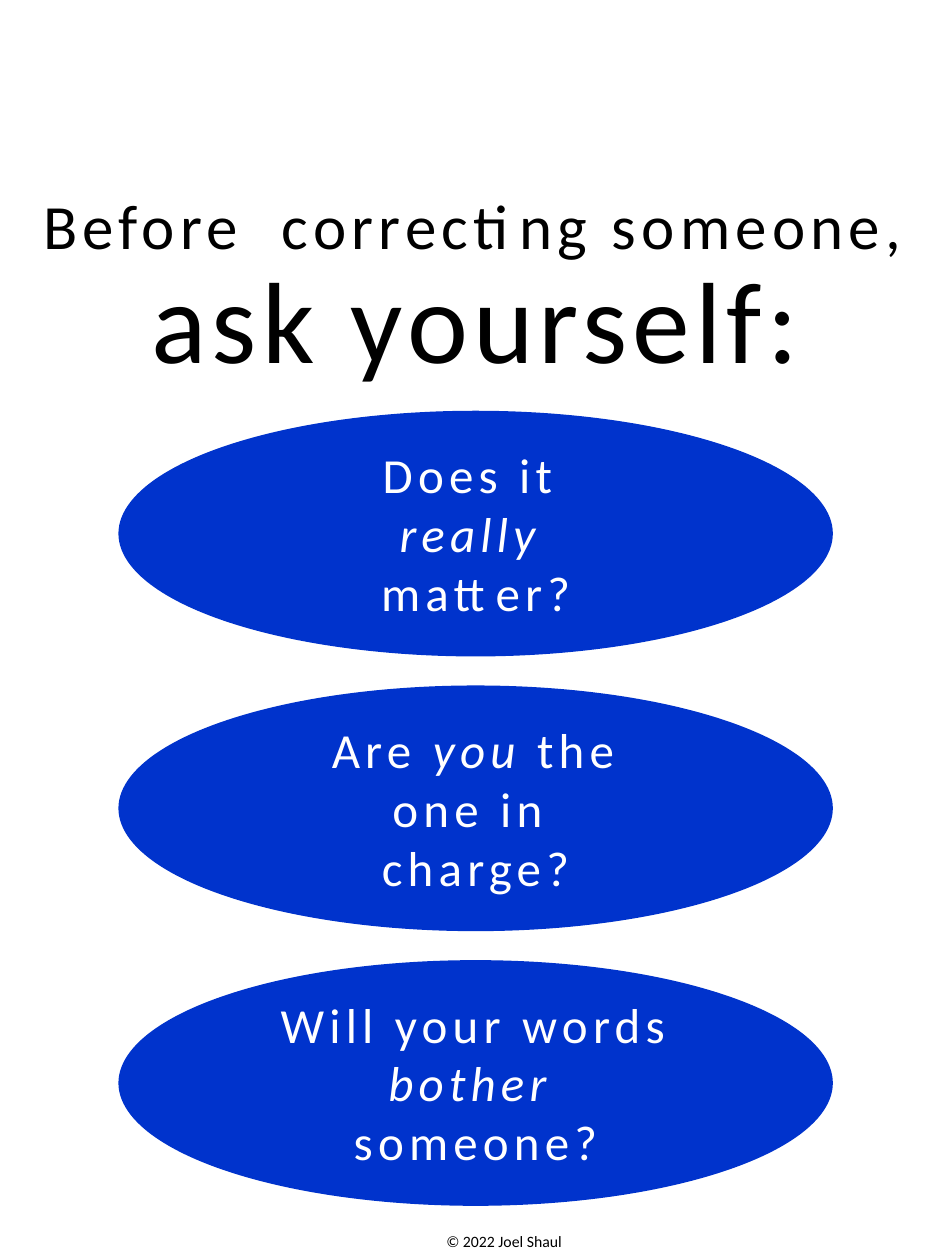
from dataclasses import dataclass

from pptx import Presentation
from pptx.dml.color import RGBColor
from pptx.enum.shapes import MSO_SHAPE as Preset
from pptx.enum.text import MSO_AUTO_SIZE as AutoSize, PP_ALIGN as Align
from pptx.util import Inches, Pt

COLOURS = {"oval": "0033CC", "question": "FFFFFF", "heading": "000000"}
OVAL_LEFT, OVAL_TOP, OVAL_WIDTH, OVAL_HEIGHT = 0.94, 3.26, 5.67, 1.95
OVAL_PITCH = 2.18
LABEL_HEIGHT = 1.51


@dataclass(frozen=True)
class Words:
    text: str
    italic: bool = False


@dataclass(frozen=True)
class Question:
    width: float
    lines: tuple[tuple[Words, ...], ...]


@dataclass(frozen=True)
class Heading:
    box: tuple[float, float, float, float]
    text: str
    size: int
    spacing: int = 3
    wrap: bool = True


QUESTIONS = (
    Question(4.25, ((Words("Does it "),), (Words("really ", True),), (Words("matter?"),))),
    Question(3.33, ((Words("Are "), Words("you", True), Words(" the one in ")),
                    (Words("charge?"),))),
    Question(3.33, ((Words("Will your words "), Words("bother ", True)),
                    (Words("someone?"),))),
)
HEADINGS = (
    Heading((0.17, 1.43, 7.17, 0.71), "Before  correcting someone,", 36),
    Heading((0.19, 1.92, 7.17, 1.21), "ask yourself:", 66),
    Heading((3.44, 9.73, 1.12, 0.25), "© 2022 Joel Shaul", 9, spacing=0, wrap=False),
)


def add_text(shapes, box: tuple[float, ...], lines: tuple[tuple[Words, ...], ...],
             size: int, colour: str, spacing: int = 3, wrap: bool = True) -> None:
    frame = shapes.add_textbox(*map(Inches, box)).text_frame
    frame.word_wrap = wrap
    frame.auto_size = AutoSize.SHAPE_TO_FIT_TEXT
    for index, line in enumerate(lines):
        paragraph = frame.add_paragraph() if index else frame.paragraphs[0]
        paragraph.alignment = Align.CENTER
        paragraph.font.name = "Calibri"
        paragraph.font.size = Pt(size)
        paragraph.font.color.rgb = RGBColor.from_string(COLOURS[colour])
        for words in line:
            run = paragraph.add_run()
            run.text = words.text
            if words.italic:
                run.font.italic = True
            if spacing:
                run._r.get_or_add_rPr().set("spc", str(spacing * 100))


def add_question(slide, row: int, question: Question) -> None:
    group = slide.shapes.add_group_shape()
    top = OVAL_TOP + row * OVAL_PITCH
    oval = group.shapes.add_shape(
        Preset.OVAL, *map(Inches, (OVAL_LEFT, top, OVAL_WIDTH, OVAL_HEIGHT)))
    oval.shadow.inherit = False
    oval.fill.solid()
    oval.fill.fore_color.rgb = RGBColor.from_string(COLOURS["oval"])
    oval.line.fill.background()
    label = (OVAL_LEFT + (OVAL_WIDTH - question.width) / 2,
             top + (OVAL_HEIGHT - LABEL_HEIGHT) / 2, question.width, LABEL_HEIGHT)
    add_text(group.shapes, label, question.lines, 28, "question")


def main() -> None:
    presentation = Presentation()
    presentation.slide_width = Inches(7.5)
    presentation.slide_height = Inches(10)
    slide = presentation.slides.add_slide(presentation.slide_layouts[6])
    for row, question in enumerate(QUESTIONS):
        add_question(slide, row, question)
    for heading in HEADINGS:
        add_text(slide.shapes, heading.box, ((Words(heading.text),),), heading.size,
                 "heading", heading.spacing, heading.wrap)
    presentation.save("out.pptx")


if __name__ == "__main__":
    main()
